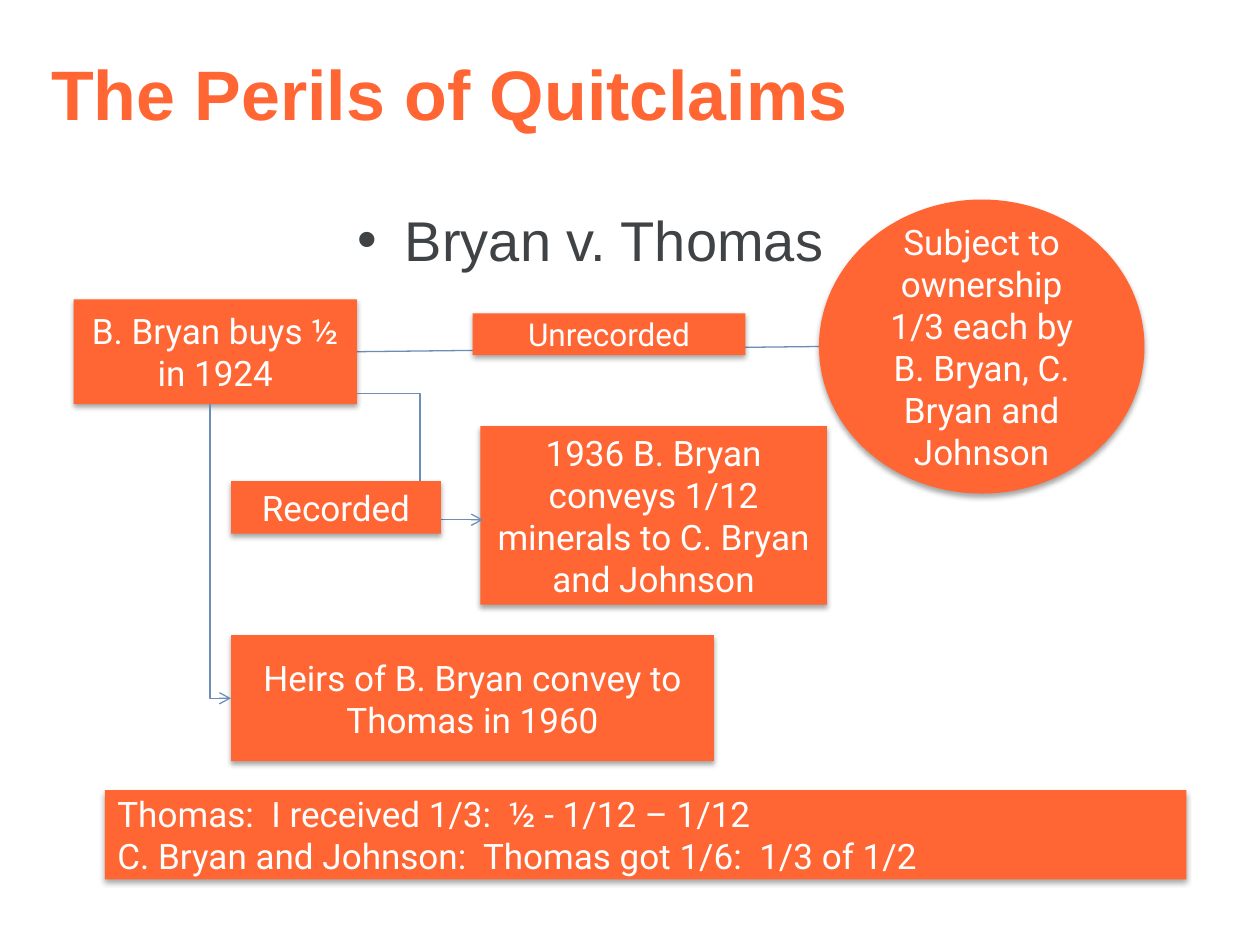
from lxml.etree import SubElement
from pptx import Presentation
from pptx.dml.color import RGBColor
from pptx.enum.shapes import MSO_CONNECTOR, MSO_SHAPE
from pptx.enum.text import MSO_ANCHOR, PP_ALIGN
from pptx.oxml.ns import qn
from pptx.util import Pt

ORANGE, WHITE, GRAY, BLUE = "FF6633", "FFFFFF", "404345", "6C8DB5"


def color(code):
    return RGBColor.from_string(code)


def style(target, **values):
    for key, value in values.items():
        setattr(target, key, value)


def node(parent, tag, **values):
    item = SubElement(parent, qn(tag))
    for key, value in values.items():
        item.set(key, str(value))
    return item


def write(para, text, size, tint, face, bold=False):
    para.text = text
    style(para.font, size=Pt(size), name=face, bold=bold)
    para.font.color.rgb = color(tint)


def add_title(slide, box, text):
    title = slide.shapes.title
    style(title, **dict(zip(("left", "top", "width", "height"), map(Pt, box))))
    style(title.text_frame, word_wrap=True, vertical_anchor=MSO_ANCHOR.MIDDLE)
    para = title.text_frame.paragraphs[0]
    write(para, text, 40, ORANGE, "Arial", True)
    para.alignment = PP_ALIGN.LEFT


def add_topic(slide, box, text):
    frame = slide.shapes.add_textbox(*map(Pt, box)).text_frame
    frame.word_wrap = True
    para = frame.paragraphs[0]
    props = para._p.get_or_add_pPr()
    style_in = {"marL": Pt(27), "indent": -Pt(27)}
    for key, value in style_in.items():
        props.set(key, str(value))
    node(props, "a:buFont", typeface="Arial")
    node(props, "a:buChar", char="•")
    write(para, text, 32, GRAY, "Arial")
    para.alignment = PP_ALIGN.CENTER


def add_card(slide, box, lines, size=20, kind=MSO_SHAPE.RECTANGLE,
             align=PP_ALIGN.CENTER):
    card = slide.shapes.add_shape(kind, *map(Pt, box))
    card.fill.solid()
    card.fill.fore_color.rgb = color(ORANGE)
    card.line.fill.background()
    # Soft shadow straight below the card
    card.shadow.inherit = False
    effects = card._element.spPr.find(qn("a:effectLst"))
    shade = node(effects, "a:outerShdw", blurRad=Pt(3.1), dist=Pt(1.8),
                 dir=5400000, rotWithShape=0)
    node(node(shade, "a:srgbClr", val="000000"), "a:alpha", val=35000)
    frame = card.text_frame
    style(frame, word_wrap=True, vertical_anchor=MSO_ANCHOR.MIDDLE)
    for i, line in enumerate(lines):
        para = frame.add_paragraph() if i else frame.paragraphs[0]
        write(para, line, size, WHITE, "Roboto")
        para.alignment = align
    return card


def add_link(slide, kind, start, end, arrow=True):
    link = slide.shapes.add_connector(kind, *map(Pt, start + end))
    link.line.color.rgb = color(BLUE)
    link.line.width = Pt(0.75)
    if arrow:
        node(link.line._get_or_add_ln(), "a:tailEnd", type="arrow")
    node(link._element.spPr, "a:effectLst")
    return link


def add_corner(slide, start, end):
    """Elbow that runs down first, then right."""
    (x1, y1), (x2, y2) = start, end
    wide, high = y2 - y1, x2 - x1
    left, top = (x1 + x2 - wide) / 2, (y1 + y2 - high) / 2
    link = add_link(slide, MSO_CONNECTOR.ELBOW, (left, top),
                    (left + wide, top + high))
    props = link._element.spPr
    props.find(qn("a:prstGeom")).set("prst", "bentConnector2")
    form = props.find(qn("a:xfrm"))
    form.set("rot", str(270 * 60000))
    form.set("flipH", "1")


def add_flow(slide, box):
    x, y, wide, high = box

    def place(left, top, width, height):
        return x + left, y + top, width, height

    # Unrecorded path, behind the cards
    span = add_link(slide, MSO_CONNECTOR.STRAIGHT, (x + 162, y + 87),
                    (x + 426, y + 84), False)
    buyer = add_card(slide, place(0, 57, 162, 60), ["B. Bryan buys ½ in 1924"])
    span.begin_connect(buyer, 3)
    add_card(slide, place(426, 0, 186, 168),
             ["Subject to ownership 1/3 each by B. Bryan, C. Bryan and Johnson"],
             kind=MSO_SHAPE.OVAL)
    add_card(slide, place(228, 65, 156, 24), ["Unrecorded"], 18)
    # Recorded path
    add_card(slide, place(232.5, 129.5, 198, 102),
             ["1936 B. Bryan conveys 1/12 minerals to C. Bryan and Johnson"])
    add_link(slide, MSO_CONNECTOR.ELBOW, (x + 162, y + 111), (x + 234, y + 183))
    add_card(slide, place(90, 161, 120, 30), ["Recorded"])
    # Heirs
    add_card(slide, place(90, 249, 276, 72),
             ["Heirs of B. Bryan convey to Thomas in 1960"])
    add_corner(slide, (x + 78, y + 117), (x + 90, y + 285))
    # Rival claims
    add_card(slide, place(18, high - 51, wide - 18, 51),
             ["Thomas:  I received 1/3:  ½ - 1/12 – 1/12",
              "C. Bryan and Johnson:  Thomas got 1/6:  1/3 of 1/2"],
             align=PP_ALIGN.LEFT)


def main():
    deck = Presentation()
    style(deck, slide_width=Pt(720), slide_height=Pt(540))
    slide = deck.slides.add_slide(deck.slide_layouts[5])
    add_title(slide, (22, 23, 480, 60), "The Perils of Quitclaims")
    add_topic(slide, (1.5, 114, 672, 45), "Bryan v. Thomas")
    add_flow(slide, (42, 114, 636, 388.5))
    deck.save("out.pptx")


if __name__ == "__main__":
    main()
